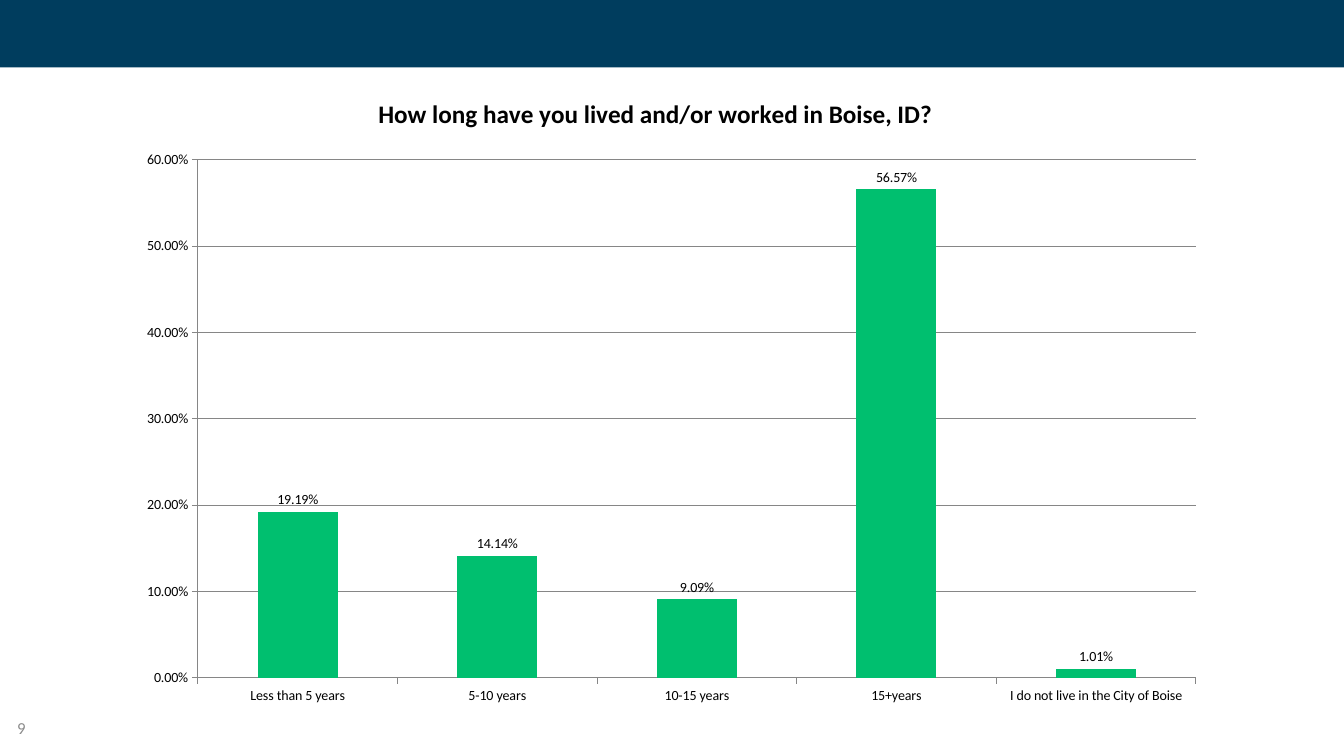
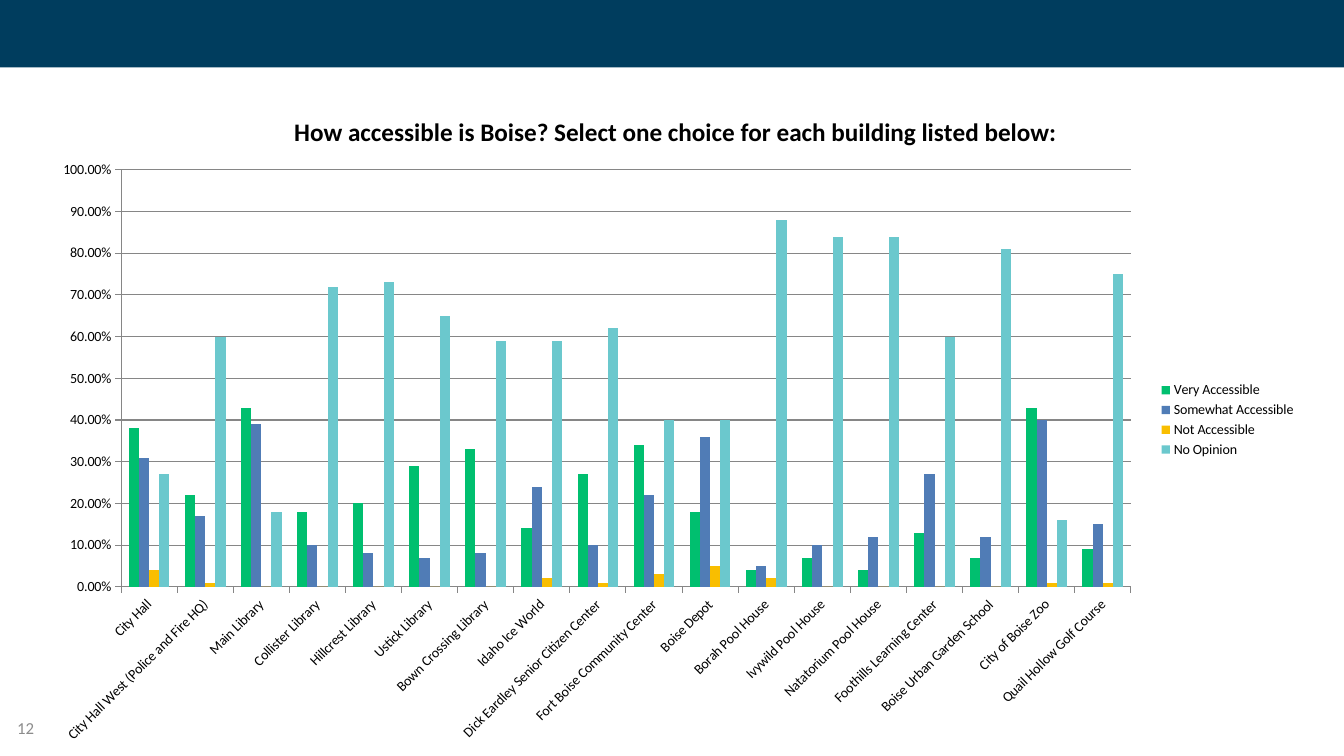
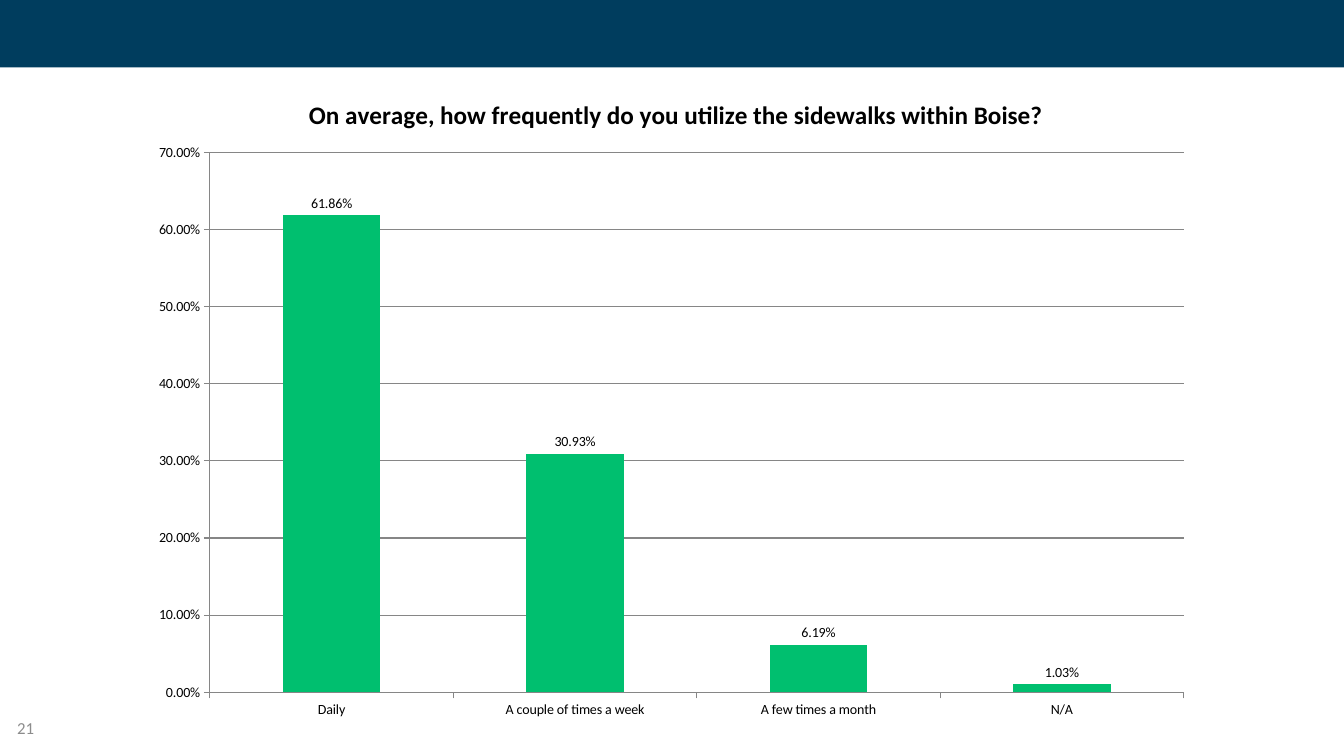
"""Build three survey result slides, each with one titled column chart."""
import pptx
import pptx.chart.data
import pptx.dml.color
import pptx.enum.chart
import pptx.enum.shapes
import pptx.enum.text
import pptx.oxml
import pptx.oxml.ns
import pptx.util
from pptx.util import Cm

FONT = "Calibri"
COLOURS = {
    name: pptx.dml.color.RGBColor.from_string(value)
    for name, value in {
        "band": "003D5E", "number": "8C8C8C", "text": "000000", "line": "868686",
        "green": "00BF6F", "blue": "507CB6", "yellow": "F9BE00", "teal": "6BC8CD",
    }.items()
}
SERIES_COLOURS = ["green", "blue", "yellow", "teal"]

QUESTIONS = [
    {
        "number": "9",
        "title": "How long have you lived and/or worked in Boise, ID?",
        "frame": (3.18, 1.9, 27.5, 16.15),
        "title_at": (9.42, 2.3),
        "plot": (4.99, 4.03, 25.15, 13.05),
        "maximum": 0.6,
        "answers": ["Less than 5 years", "5-10 years", "10-15 years", "15+years",
                    "I do not live in the City of Boise"],
        "series": {"Series 1": [0.1919, 0.1414, 0.0909, 0.5657, 0.0101]},
    },
    {
        "number": "12",
        "title": "How accessible is Boise? Select one choice for each building listed below:",
        "frame": (0.97, 2.11, 31.95, 16.94),
        "title_at": (7.3, 2.77),
        "plot": (3.05, 4.28, 25.45, 10.51),
        "maximum": 1,
        "answers": ["City Hall", "City Hall West (Police and Fire HQ)", "Main Library",
                    "Collister Library", "Hillcrest Library", "Ustick Library",
                    "Bown Crossing Library", "Idaho Ice World",
                    "Dick Eardley Senior Citizen Center", "Fort Boise Community Center",
                    "Boise Depot", "Borah Pool House", "Ivywild Pool House",
                    "Natatorium Pool House", "Foothills Learning Center",
                    "Boise Urban Garden School", "City of Boise Zoo",
                    "Quail Hollow Golf Course"],
        "series": {
            "Very Accessible": [0.38, 0.22, 0.43, 0.18, 0.2, 0.29, 0.33, 0.14, 0.27,
                                0.34, 0.18, 0.04, 0.07, 0.04, 0.13, 0.07, 0.43, 0.09],
            "Somewhat Accessible": [0.31, 0.17, 0.39, 0.1, 0.08, 0.07, 0.08, 0.24, 0.1,
                                    0.22, 0.36, 0.05, 0.1, 0.12, 0.27, 0.12, 0.4, 0.15],
            "Not Accessible": [0.04, 0.01, 0, 0, 0, 0, 0, 0.02, 0.01,
                               0.03, 0.05, 0.02, 0, 0, 0, 0, 0.01, 0.01],
            "No Opinion": [0.27, 0.6, 0.18, 0.72, 0.73, 0.65, 0.59, 0.59, 0.62,
                           0.4, 0.4, 0.88, 0.84, 0.84, 0.6, 0.81, 0.16, 0.75],
        },
    },
    {
        "number": "21",
        "title": "On average, how frequently do you utilize the sidewalks within Boise?",
        "frame": (3.5, 1.7, 26.87, 16.74),
        "title_at": (7.67, 2.35),
        "plot": (5.29, 3.84, 24.54, 13.61),
        "maximum": 0.7,
        "answers": ["Daily", "A couple of times a week", "A few times a month", "N/A"],
        "series": {"Series 1": [0.6186, 0.3093, 0.0619, 0.0103]},
    },
]


def style_font(font, size, colour, bold=False):
    font.name = FONT
    font.size = pptx.util.Pt(size)
    font.bold = bold
    font.color.rgb = COLOURS[colour]


def place(part, position, frame, index):
    """Fix a chart part at a slide position given in centimetres."""
    qn = pptx.oxml.ns.qn
    for old in part.findall(qn("c:layout")):
        part.remove(old)
    left, top, width, height = frame
    fractions = [(position[0] - left) / width, (position[1] - top) / height]
    if len(position) == 4:
        fractions += [position[2] / width, position[3] / height]
    target = '<c:layoutTarget val="inner"/>' if len(position) == 4 else ""
    modes = '<c:xMode val="edge"/><c:yMode val="edge"/>'
    sizes = "".join(f'<c:{key} val="{value:.4f}"/>' for key, value in zip("xywh", fractions))
    namespace = pptx.oxml.ns.nsdecls("c")
    part.insert(index, pptx.oxml.parse_xml(
        f"<c:layout {namespace}><c:manualLayout>{target}{modes}{sizes}"
        "</c:manualLayout></c:layout>"))


deck = pptx.Presentation()
deck.slide_width = Cm(33.87)
deck.slide_height = Cm(19.05)
layout = deck.slide_layouts[6]

for question in QUESTIONS:
    slide = deck.slides.add_slide(layout)
    if question is QUESTIONS[0]:
        band = slide.shapes.add_shape(
            pptx.enum.shapes.MSO_SHAPE.RECTANGLE, 0, 0, deck.slide_width, Cm(1.7))
        band.shadow.inherit = False
        band.fill.solid()
        band.fill.fore_color.rgb = COLOURS["band"]
        band.line.fill.background()
        layout.shapes.element.append(band.element)

    page = slide.shapes.add_textbox(Cm(0.18), Cm(17.83), Cm(2.11), Cm(1.02)).text_frame
    page.word_wrap = True
    page.vertical_anchor = pptx.enum.text.MSO_ANCHOR.MIDDLE
    page_number = page.paragraphs[0].add_run()
    page_number.text = question["number"]
    style_font(page_number.font, 12, "number")

    results = pptx.chart.data.CategoryChartData(number_format="0.00%")
    results.categories = question["answers"]
    for name, shares in question["series"].items():
        results.add_series(name, shares)
    chart = slide.shapes.add_chart(
        pptx.enum.chart.XL_CHART_TYPE.COLUMN_CLUSTERED,
        *[Cm(length) for length in question["frame"]], results).chart
    style_font(chart.font, 10, "text")

    chart.has_title = True
    heading = chart.chart_title.text_frame.paragraphs[0].add_run()
    heading.text = question["title"]
    style_font(heading.font, 18, "text", bold=True)
    place(chart.element.xpath("c:chart/c:title")[0],
          question["title_at"], question["frame"], 1)
    place(chart.element.xpath("c:chart/c:plotArea")[0],
          question["plot"], question["frame"], 0)

    columns = chart.plots[0]
    columns.gap_width = 150
    columns.overlap = 0
    columns.vary_by_categories = False
    for series, colour in zip(columns.series, SERIES_COLOURS):
        series.format.fill.solid()
        series.format.fill.fore_color.rgb = COLOURS[colour]

    percent_axis, answer_axis = chart.value_axis, chart.category_axis
    percent_axis.minimum_scale = 0
    percent_axis.maximum_scale = question["maximum"]
    percent_axis.major_unit = 0.1
    percent_axis.has_major_gridlines = True
    percent_axis.tick_labels.number_format = "0.00%"
    percent_axis.tick_labels.number_format_is_linked = False
    for axis in (percent_axis, answer_axis):
        axis.major_tick_mark = pptx.enum.chart.XL_TICK_MARK.OUTSIDE
        style_font(axis.tick_labels.font, 10, "text")
    for rule in (percent_axis, answer_axis, percent_axis.major_gridlines):
        rule.format.line.color.rgb = COLOURS["line"]
        rule.format.line.width = pptx.util.Pt(0.75)

    compared = len(question["series"]) > 1
    chart.has_legend = compared
    if compared:
        chart.legend.position = pptx.enum.chart.XL_LEGEND_POSITION.RIGHT
        chart.legend.include_in_layout = False
        style_font(chart.legend.font, 10, "text")
        answer_axis.tick_labels.font
        answer_axis.format
        chart.element.xpath(".//c:catAx/c:txPr/a:bodyPr")[0].set("rot", "-2700000")
    else:
        columns.has_data_labels = True
        labels = columns.data_labels
        labels.show_value = True
        labels.number_format = "0.00%"
        labels.number_format_is_linked = False
        labels.position = pptx.enum.chart.XL_LABEL_POSITION.OUTSIDE_END
        style_font(labels.font, 10, "text")

deck.save("out.pptx")
